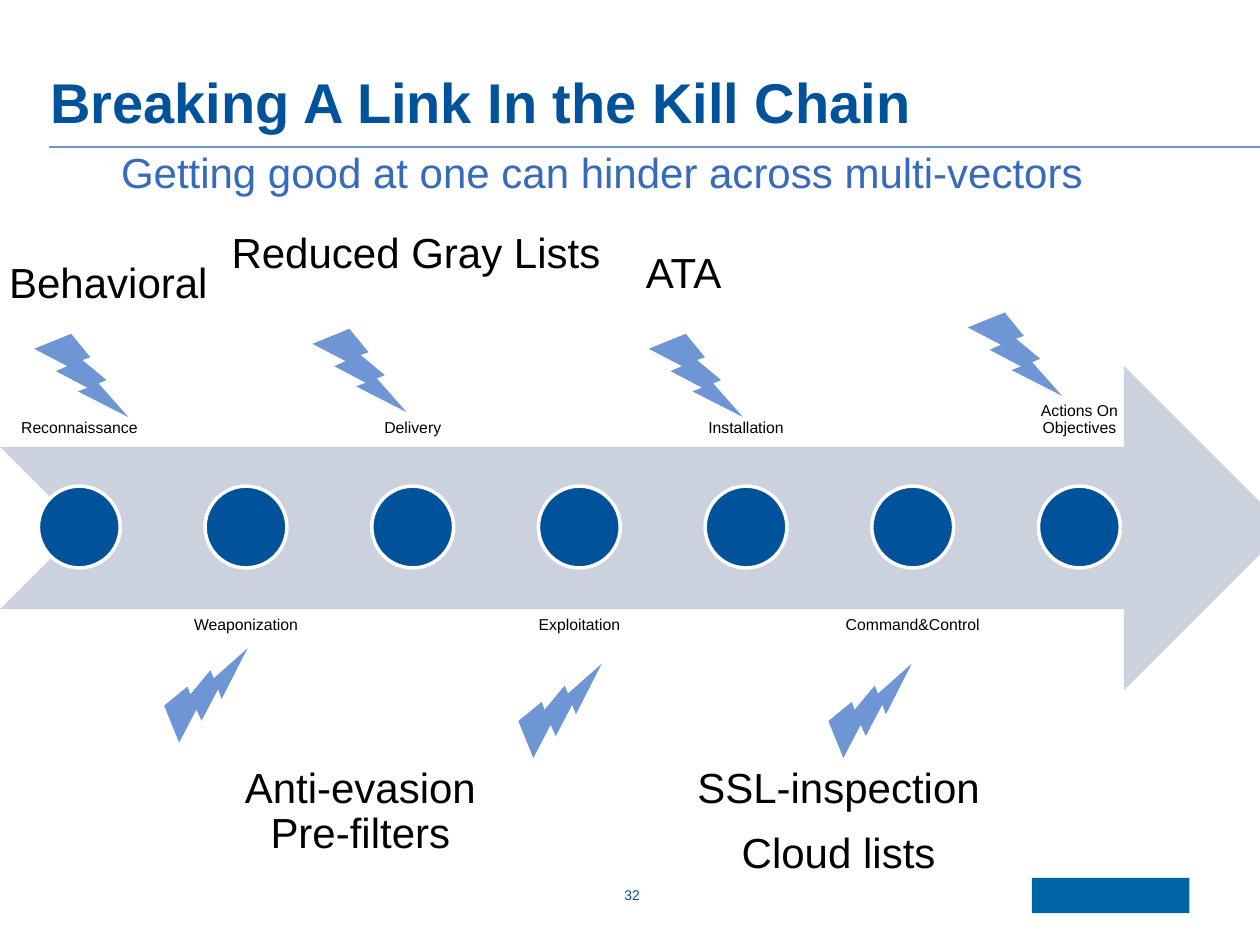
"""Build the kill chain slide."""
from pptx import Presentation
from pptx import util as u
from pptx.dml.color import RGBColor
from pptx.enum import shapes, text
from pptx.oxml.ns import qn
from lxml import etree

NAVY, SKY, BLUE, GRAY = "00529B", "6E96D5", "366ABC", "CCD1DE"
BLACK, WHITE = "000000", "FFFFFF"
KIND = shapes.MSO_SHAPE
TOP, BASE = text.MSO_ANCHOR.TOP, text.MSO_ANCHOR.BOTTOM
LEFT, MID = text.PP_ALIGN.LEFT, text.PP_ALIGN.CENTER

STAGES = [
    "Reconnaissance", "Weaponization", "Delivery", "Exploitation",
    "Installation", "Command&Control", "Actions On Objectives",
]
NOTES = [
    (["Anti-evasion\nPre-filters"], (4.65, 15.34, 5.23, 2.11), BLACK),
    (["SSL-inspection", "Cloud lists"], (13.77, 15.34, 6.27, 2.51), BLACK),
    (["Reduced Gray Lists"], (4.37, 4.55, 8.03, 1.17), BLACK),
    (["Getting good at one can hinder across multi-vectors"],
     (2.18, 2.95, 19.91, 1.17), BLUE),
    (["Behavioral"], (-0.1, 5.16, 4.57, 1.17), BLACK),
    (["ATA"], (12.75, 4.95, 2.06, 1.17), BLACK),
]
BOLTS = [
    (6.3, 6.63, 0), (13.08, 6.73, 0), (0.69, 6.73, 0), (19.51, 6.3, 0),
    (3.2, 13.18, 270), (10.34, 13.49, 270), (16.59, 13.49, 270),
]
PITCH, DOT, SPAN, TALL = 3.36, 1.65, 3.2, 6.55


def color(code):
    return RGBColor.from_string(code)


def place(box):
    return [u.Cm(n) for n in box]


def write(slide, lines, box, size=24, tint=BLACK, bold=False, align=MID,
          anchor=TOP, wrap=True, pad=None, lead=0.9, gaps=(0, 0)):
    frame = slide.shapes.add_textbox(*place(box)).text_frame
    frame.word_wrap, frame.vertical_anchor = wrap, anchor
    if pad is not None:
        frame.margin_left = frame.margin_right = u.Cm(pad)
        frame.margin_top = frame.margin_bottom = u.Cm(pad)
    for i, line in enumerate(lines):
        para = frame.add_paragraph() if i else frame.paragraphs[0]
        para.text, para.alignment, para.line_spacing = line, align, lead
        para.space_before, para.space_after = map(u.Pt, gaps)
        for run in para.runs:
            font = run.font
            font.name, font.size, font.bold = "Arial", u.Pt(size), bold
            font.color.rgb = color(tint)


def draw(slide, kind, box, fill, edge=None, turn=0):
    shape = slide.shapes.add_shape(kind, *place(box))
    shape.shadow.inherit = False
    shape.rotation = turn
    shape.fill.solid()
    shape.fill.fore_color.rgb = color(fill)
    if edge:
        shape.line.color.rgb = color(edge)
        shape.line.width = u.Pt(2)
    else:
        shape.line.fill.background()


def rule(slide, x, y, end):
    line = slide.shapes.add_connector(
        shapes.MSO_CONNECTOR.STRAIGHT, *place((x, y, end, y)))
    line.line.color.rgb = color(SKY)
    line.line.width = u.Pt(1)
    etree.SubElement(line._element.spPr, qn("a:effectLst"))


def main():
    deck = Presentation()
    deck.slide_width, deck.slide_height = u.Cm(25.4), u.Cm(19.05)
    slide = deck.slides.add_slide(deck.slide_layouts[6])

    draw(slide, KIND.RECTANGLE, (20.8, 17.7, 3.18, 0.71), "0065A4")
    rule(slide, 0.99, 2.97, 25.4)
    write(slide, ["Breaking A Link In the Kill Chain"],
          (0.76, 0.53, 23.24, 2.46), size=32, tint=NAVY, bold=True,
          align=LEFT, anchor=BASE, pad=0.25)
    write(slide, [" 32"], (12.07, 17.75, 1.27, 0.64), size=8, tint=NAVY,
          lead=1)

    draw(slide, KIND.NOTCHED_RIGHT_ARROW, (0, 7.37, 25.93, TALL), GRAY)
    for i, name in enumerate(STAGES):
        left = i * PITCH
        y, anchor = (12.27, TOP) if i % 2 else (2.44, BASE)
        write(slide, [name], (left, y, SPAN, TALL), size=9, anchor=anchor,
              pad=0.18)
        draw(slide, KIND.OVAL, (left + (SPAN - DOT) / 2, 9.8, DOT, DOT),
             NAVY, edge=WHITE)

    for x, y, turn in BOLTS:
        draw(slide, KIND.LIGHTNING_BOLT, (x, y, 1.9, 1.68), SKY, turn=turn)
    for lines, box, tint in NOTES:
        write(slide, lines, box, tint=tint, wrap=False, gaps=(8.3, 2.8))
    deck.save("out.pptx")


if __name__ == "__main__":
    main()
